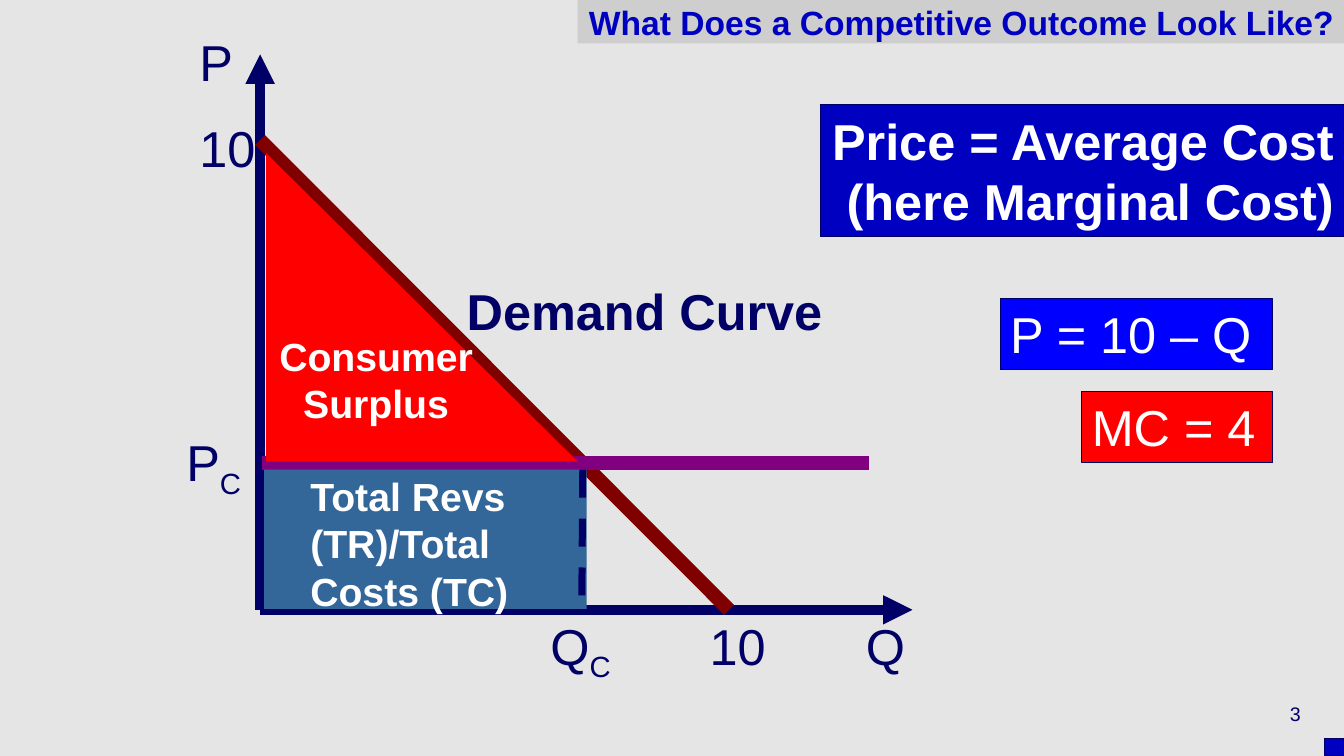
from lxml import etree
from pptx import Presentation
from pptx.dml.color import RGBColor
from pptx.enum import dml, shapes, text
from pptx.oxml import ns
from pptx.util import Inches, Pt

NAVY, BLUE, BRIGHT_BLUE = "000066", "0000C0", "0000FF"
RED, MAROON, PURPLE, STEEL = "FF0000", "800000", "800080", "336699"
WHITE, PALE_GREY, GREY = "FFFFFF", "E5E5E5", "CECECE"
LEFT, CENTER, RIGHT = text.PP_ALIGN.LEFT, text.PP_ALIGN.CENTER, text.PP_ALIGN.RIGHT
RECTANGLE = shapes.MSO_SHAPE.RECTANGLE


def rgb(color):
    return RGBColor.from_string(color)


def write(shape, words, size=36, color=NAVY, bold=False, align=LEFT,
          wrap=True, anchor=text.MSO_ANCHOR.TOP, subscript=None):
    frame = shape.text_frame
    frame.word_wrap = wrap
    frame.vertical_anchor = anchor
    paragraph = frame.paragraphs[0]
    paragraph.alignment = align
    paragraph.font.name = "Arial"
    paragraph.font.size = Pt(size)
    paragraph.font.bold = bold
    paragraph.font.color.rgb = rgb(color)
    paragraph.add_run().text = words
    if subscript:
        lowered = paragraph.add_run()
        lowered.text = subscript
        lowered.font._element.set("baseline", "-25000")


def add_label(slide, box, words, **style):
    write(slide.shapes.add_textbox(*map(Inches, box)), words, **style)


def add_block(slide, box, fill, outline=None, kind=RECTANGLE):
    block = slide.shapes.add_shape(kind, *map(Inches, box))
    block.shadow.inherit = False
    block.fill.solid()
    block.fill.fore_color.rgb = rgb(fill)
    if outline:
        block.line.color.rgb = rgb(outline)
        block.line.width = Pt(0.75)
    else:
        block.line.fill.background()
    return block


def add_line(slide, start, end, color, width, arrow=False, dashed=False):
    line = slide.shapes.add_connector(
        shapes.MSO_CONNECTOR.STRAIGHT, *map(Inches, (*start, *end)))
    line.line.color.rgb = rgb(color)
    line.line.width = Pt(width)
    if dashed:
        line.line.dash_style = dml.MSO_LINE.DASH
    if arrow:
        etree.SubElement(line.line._get_or_add_ln(), ns.qn("a:tailEnd"), type="triangle")
    etree.SubElement(line._element.spPr, ns.qn("a:effectLst"))


def build_title(slide, box):
    write(add_block(slide, box, GREY), "What Does a Competitive Outcome Look Like?",
          size=24, color=BLUE, bold=True, align=RIGHT, wrap=False,
          anchor=text.MSO_ANCHOR.MIDDLE)


def build_footer(slide, right, bottom):
    add_label(slide, (right - 3.11, bottom - 0.67, 2.78, 0.5), "3", size=14,
              align=RIGHT, anchor=text.MSO_ANCHOR.MIDDLE)
    add_block(slide, (right - 0.19, bottom - 0.17, 0.19, 0.17), BLUE, NAVY)


def build_graph(slide, left, top, width, height):
    bottom = top + height
    origin = (left, bottom)
    price_y, quantity_x = top + 4.05, left + 3.2
    line_edge = price_y + 0.07

    # Axes, demand curve and competitive price
    add_line(slide, origin, (left + width, bottom), NAVY, 7, arrow=True)
    add_line(slide, origin, (left, top), NAVY, 7, arrow=True)
    add_line(slide, (left, top + 0.85), (left + 4.65, bottom), MAROON, 10)
    add_line(slide, (left + 0.02, price_y), (left + 6.04, price_y), PURPLE, 10)

    # Consumer surplus and revenue areas
    add_block(slide, (left + 0.06, top + 0.98, 3.09, 3.06), RED,
              kind=shapes.MSO_SHAPE.RIGHT_TRIANGLE)
    add_block(slide, (left + 0.04, line_edge, 3.2, bottom - line_edge - 0.01), STEEL)
    add_line(slide, (quantity_x, line_edge), (quantity_x - 0.01, bottom),
             NAVY, 5, dashed=True)

    # Names of the curve and areas
    add_label(slide, (left + 1.95, top + 2.19, 3.97, 0.71), "Demand Curve", bold=True)
    add_label(slide, (left + 0.06, top + 2.71, 2.18, 1.04), "Consumer Surplus",
              size=28, color=WHITE, bold=True, align=CENTER)
    add_label(slide, (left + 0.4, top + 4.1, 2.27, 1.51),
              "Total Revs (TR)/Total Costs (TC)", size=28, color=WHITE, bold=True)

    # Axis labels: offset from the origin, offset from the top, width
    for dx, dy, label_width, words, subscript in [
        (-0.7, -0.28, 0.84, "P", None),
        (-0.7, 0.57, 0.76, "10", None),
        (-0.83, 3.69, 0.78, "P", "C"),
        (2.78, height, 0.84, "Q", "C"),
        (4.36, height, 0.77, "10", None),
        (5.91, height, 0.6, "Q", None),
    ]:
        add_label(slide, (left + dx, top + dy, label_width, 0.71), words,
                  wrap=False, subscript=subscript)


def build_equations(slide, right, top):
    for inset, dy, width, height, fill, words, bold, align in [
        (0, 0, 5.19, 1.31, BLUE, "Price = Average Cost (here Marginal Cost)", True, RIGHT),
        (0.71, 1.92, 2.7, 0.71, BRIGHT_BLUE, "P = 10 – Q", False, LEFT),
        (0.71, 2.84, 1.89, 0.71, RED, "MC = 4", False, LEFT),
    ]:
        box = (right - inset - width, top + dy, width, height)
        write(add_block(slide, box, fill, NAVY), words, color=WHITE, bold=bold, align=align)


def main():
    deck = Presentation()
    deck.slide_width, deck.slide_height = Inches(13.33), Inches(7.5)
    slide = deck.slides.add_slide(deck.slide_layouts[6])
    slide.background.fill.solid()
    slide.background.fill.fore_color.rgb = rgb(PALE_GREY)
    build_title(slide, (5.73, 0, 7.6, 0.43))
    build_footer(slide, right=13.33, bottom=7.5)
    build_graph(slide, left=2.58, top=0.54, width=6.47, height=5.51)
    build_equations(slide, right=13.33, top=1.04)
    deck.save("out.pptx")


if __name__ == "__main__":
    main()
